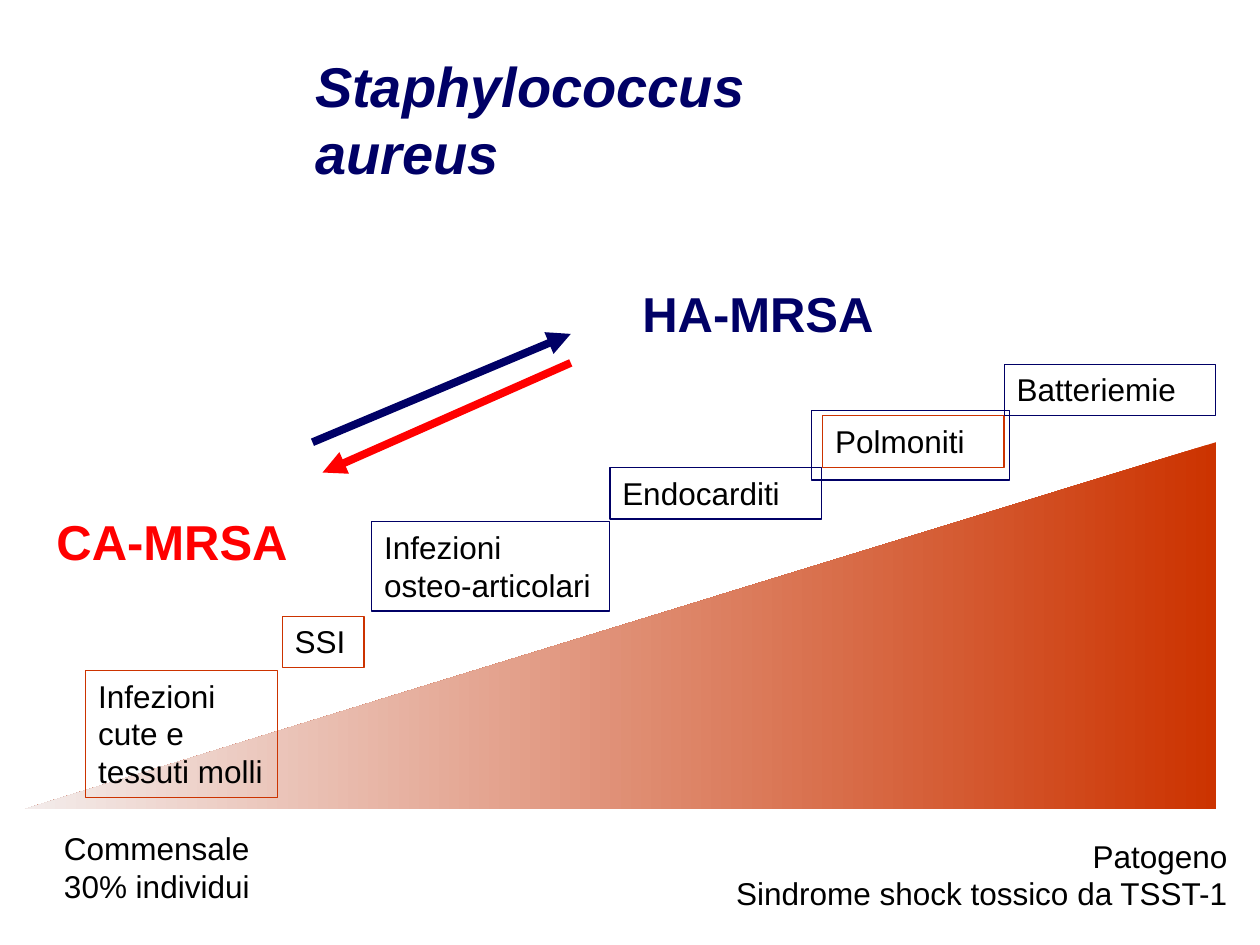
"""Build the Staphylococcus aureus slide: from commensal to pathogen."""
from lxml import etree
from pptx import Presentation
from pptx.dml.color import RGBColor
from pptx.enum.shapes import MSO_CONNECTOR, MSO_SHAPE
from pptx.enum.text import MSO_ANCHOR, MSO_AUTO_SIZE, PP_ALIGN
from pptx.oxml.ns import qn
from pptx.util import Inches, Pt

LEFT, RIGHT = PP_ALIGN.LEFT, PP_ALIGN.RIGHT
TOP = MSO_ANCHOR.TOP
NO_AUTOFIT = MSO_AUTO_SIZE.NONE
RECTANGLE, TRIANGLE = MSO_SHAPE.RECTANGLE, MSO_SHAPE.RIGHT_TRIANGLE
STRAIGHT = MSO_CONNECTOR.STRAIGHT

NAVY = RGBColor(0x00, 0x00, 0x66)
RED = RGBColor(0xFF, 0x00, 0x00)
RUST = RGBColor(0xCC, 0x33, 0x00)
PALE = RGBColor(0xF3, 0xEC, 0xEB)
BLACK = RGBColor(0x00, 0x00, 0x00)


def write(shape, lines, size=18, color=BLACK, bold=False, align=LEFT, wrap=True):
    frame = shape.text_frame
    frame.text = "\n".join(lines)
    frame.word_wrap = wrap
    frame.auto_size = NO_AUTOFIT
    frame.vertical_anchor = TOP
    for para in frame.paragraphs:
        para.alignment = align
        para.font.name = "Arial"
        para.font.size = Pt(size)
        para.font.bold = bold
        para.font.color.rgb = color


def add_frame(page, area, color):
    box = page.shapes.add_shape(RECTANGLE, *map(Inches, area))
    box.shadow.inherit = False
    box.fill.background()
    box.line.color.rgb = color
    box.line.width = Pt(0.75)
    return box


deck = Presentation()
deck.slide_width, deck.slide_height = Inches(10), Inches(7.5)
page = deck.slides.add_slide(deck.slide_layouts[5])

title = page.shapes.title
title.left, title.top = Inches(2.4), Inches(0.36)
title.width, title.height = Inches(5.1), Inches(0.63)
write(title, ["Staphylococcus aureus"], 32, NAVY, True)
title.text_frame.paragraphs[0].font.italic = True

END_LABELS = [
    ((0.41, 6.53, 1.74, 0.7), ["Commensale", "30% individui"], LEFT),
    ((5.72, 6.59, 4.12, 0.7), ["Patogeno", "Sindrome shock tossico da TSST-1"], RIGHT),
]
for area, lines, align in END_LABELS:
    label = page.shapes.add_textbox(*map(Inches, area))
    write(label, lines, align=align, wrap=False)

wedge = page.shapes.add_shape(TRIANGLE, Inches(0.2), Inches(3.51), Inches(9.45), Inches(2.91))
wedge.shadow.inherit = False
wedge.line.fill.background()
wedge.fill.gradient()
wedge.fill.gradient_angle = 0
for stop, color in zip(wedge.fill.gradient_stops, (RUST, PALE)):
    stop.color.rgb = color
wedge._element.spPr.xfrm.set("flipH", "1")

INFECTIONS = [
    ((0.68, 5.32, 1.52, 1.01), "Infezioni cute e tessuti molli", RUST),
    ((2.24, 4.89, 0.65, 0.41), "SSI", RUST),
    ((6.53, 3.3, 1.44, 0.41), "Polmoniti", RUST),
    ((4.84, 3.71, 1.68, 0.41), "Endocarditi", NAVY),
    ((7.97, 2.89, 1.68, 0.41), "Batteriemie", NAVY),
    ((2.95, 4.14, 1.89, 0.71), "Infezioni osteo-articolari", NAVY),
]
for area, name, color in INFECTIONS:
    write(add_frame(page, area, color), [name])

for left, top, name, color in [(0.35, 4.06, "CA-MRSA", RED), (5, 2.25, "HA-MRSA", NAVY)]:
    label = page.shapes.add_textbox(Inches(left), Inches(top), Inches(2.04), Inches(0.52))
    write(label, [name], 28, color, True, wrap=False)
    label.text_frame.paragraphs[0].line_spacing = 0.9

add_frame(page, (6.44, 3.26, 1.57, 0.55), NAVY)

ARROWS = [((2.48, 3.51, 4.53, 2.65), NAVY), ((4.53, 2.88, 2.56, 3.75), RED)]
for ends, color in ARROWS:
    arrow = page.shapes.add_connector(STRAIGHT, *map(Inches, ends))
    arrow.line.color.rgb = color
    arrow.line.width = Pt(4.5)
    etree.SubElement(arrow.line._get_or_add_ln(), qn("a:tailEnd"), type="triangle")
    etree.SubElement(arrow._element.spPr, qn("a:effectLst"))

deck.save("out.pptx")
